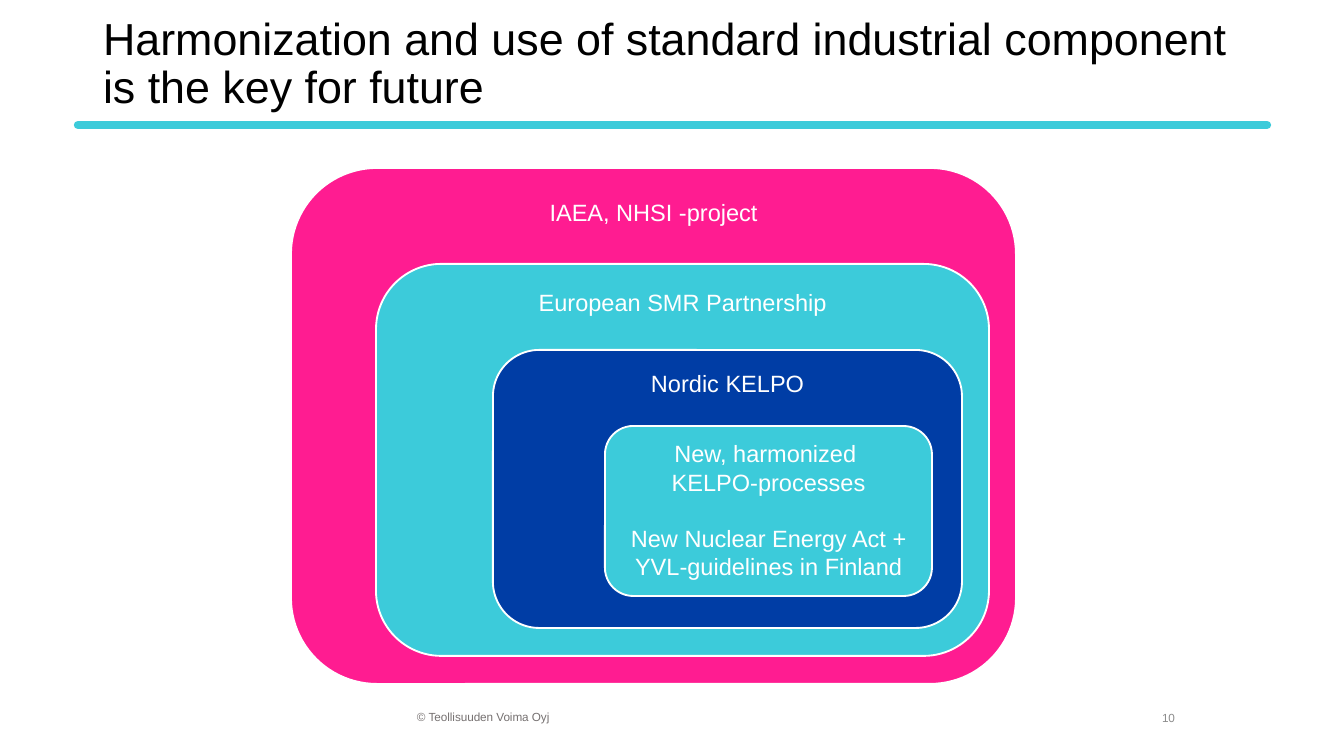
from lxml.etree import SubElement
from pptx import Presentation
from pptx.dml.color import RGBColor
from pptx.enum.shapes import MSO_CONNECTOR, MSO_SHAPE
from pptx.enum.text import MSO_ANCHOR, PP_ALIGN
from pptx.oxml.ns import qn
from pptx.util import Emu, Pt

PINK = RGBColor(0xFF, 0x1C, 0x91)
TURQUOISE = RGBColor(0x3C, 0xCB, 0xDA)
BLUE = RGBColor(0x00, 0x3D, 0xA5)
WHITE = RGBColor(0xFF, 0xFF, 0xFF)
BLACK = RGBColor(0x00, 0x00, 0x00)
FOOTER_GRAY = RGBColor(0x76, 0x71, 0x71)
NUMBER_GRAY = RGBColor(0x8C, 0x8C, 0x8C)

FONT = "Arial"
PX_PER_INCH = 134.4

# Outermost first: left, top, width, height, fill, paragraphs
NESTED_LEVELS = [
    (291, 168, 725, 516, PINK, ["IAEA, NHSI -project"]),
    (376, 264, 613, 392, TURQUOISE, ["European SMR Partnership"]),
    (493, 350, 469, 278, BLUE, ["Nordic KELPO"]),
    (605, 426, 327, 170, TURQUOISE, [
        "New, harmonized \vKELPO-processes",
        "New Nuclear Energy Act + YVL-guidelines in Finland",
    ]),
]


def px(length):
    return Emu(round(length * 914400 / PX_PER_INCH))


def fill_text(shape, paragraphs, size, color, align, anchor, gap=0, spacing=None):
    """Write the paragraphs in one style, with gap points between them."""
    frame = shape.text_frame
    frame.word_wrap = True
    frame.vertical_anchor = anchor
    frame.margin_left = frame.margin_right = px(10)
    frame.margin_top = frame.margin_bottom = px(5)
    for index, text in enumerate(paragraphs):
        paragraph = frame.add_paragraph() if index else frame.paragraphs[0]
        paragraph.text = text
        paragraph.alignment = align
        paragraph.line_spacing = spacing
        if index:
            paragraph.space_before = Pt(gap)
        paragraph.font.name = FONT
        paragraph.font.size = Pt(size)
        paragraph.font.color.rgb = color


def add_label(slide, box, text, size, color, align=PP_ALIGN.LEFT,
              anchor=MSO_ANCHOR.MIDDLE, spacing=None):
    shape = slide.shapes.add_textbox(*map(px, box))
    fill_text(shape, [text], size, color, align, anchor, spacing=spacing)


def add_title_rule(slide):
    rule = slide.shapes.add_connector(
        MSO_CONNECTOR.STRAIGHT, px(78), px(125), px(1267), px(125))
    rule.line.color.rgb = TURQUOISE
    rule.line.width = Pt(4.5)
    rule.line._get_or_add_ln().set("cap", "rnd")
    SubElement(rule._element.spPr, qn("a:effectLst"))


def add_level(slide, left, top, width, height, color, paragraphs):
    shape = slide.shapes.add_shape(
        MSO_SHAPE.ROUNDED_RECTANGLE, px(left), px(top), px(width), px(height))
    shape.shadow.inherit = False
    shape.fill.solid()
    shape.fill.fore_color.rgb = color
    shape.line.color.rgb = WHITE
    shape.line.width = Pt(1)
    fill_text(shape, paragraphs, 12.6, WHITE, PP_ALIGN.CENTER, MSO_ANCHOR.TOP, gap=15)


def main():
    presentation = Presentation()
    presentation.slide_width = px(1344)
    presentation.slide_height = px(756)
    slide = presentation.slides.add_slide(presentation.slide_layouts[6])

    add_title_rule(slide)
    add_label(slide, (407, 703, 211, 28), "© Teollisuuden Voima Oyj", 6.3, FOOTER_GRAY)
    add_label(slide, (1129, 704, 56, 27), "10", 6.3, NUMBER_GRAY, PP_ALIGN.RIGHT)
    add_label(slide, (93, 23, 1158, 95),
              "Harmonization and use of standard industrial component is the key for future",
              24, BLACK, anchor=MSO_ANCHOR.BOTTOM, spacing=0.9)
    for level in NESTED_LEVELS:
        add_level(slide, *level)

    presentation.save("out.pptx")


if __name__ == "__main__":
    main()
